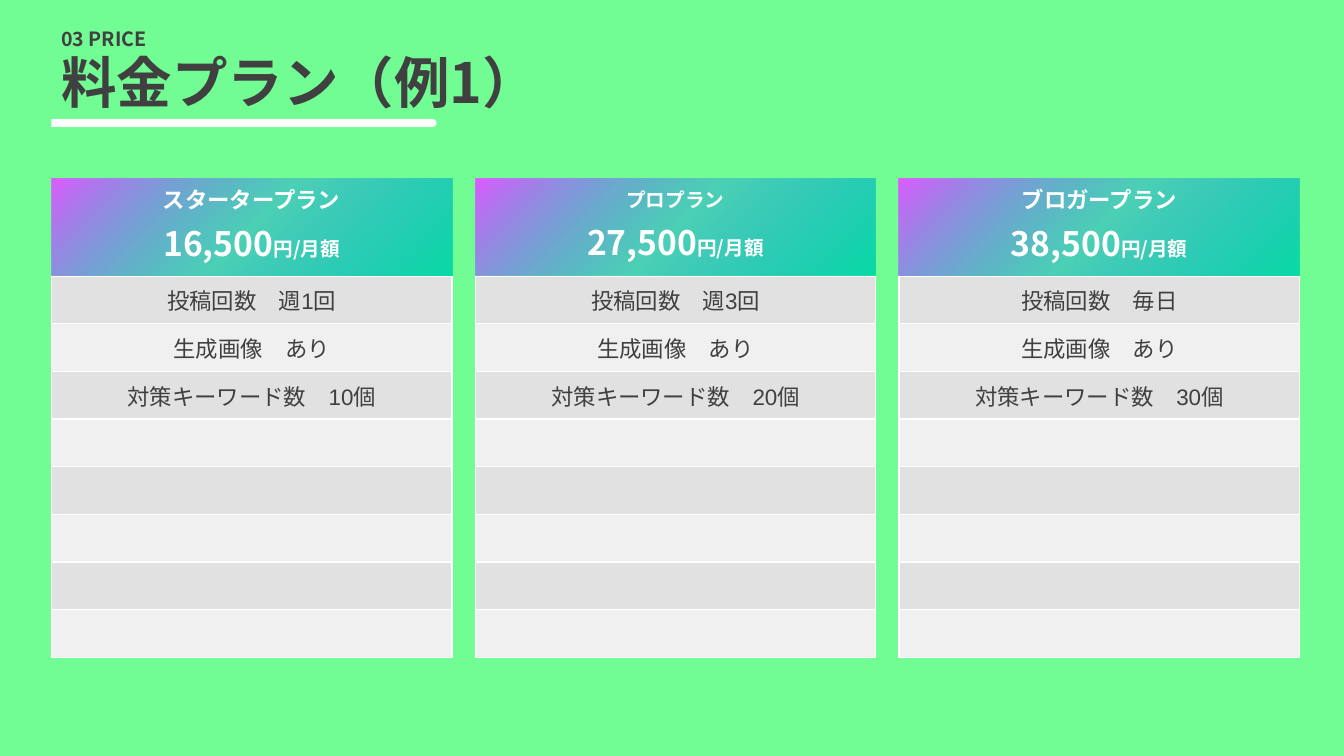
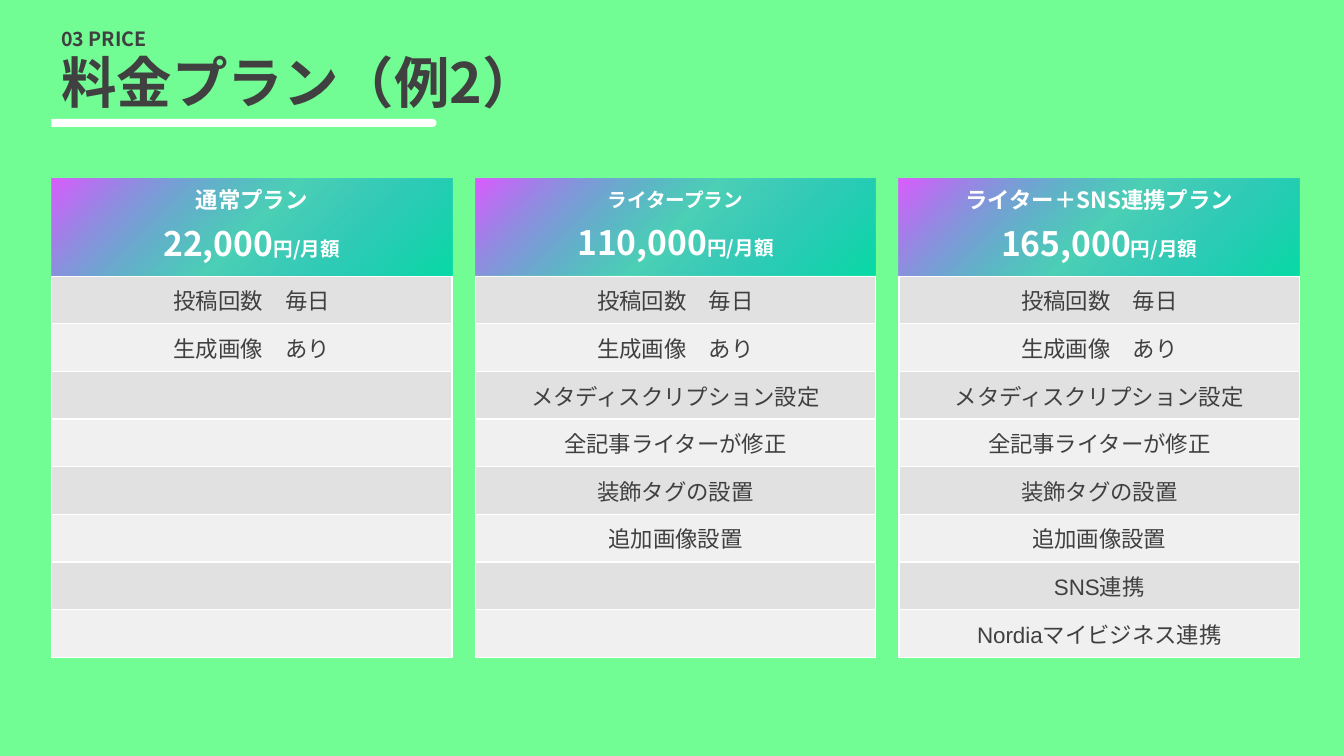
from pptx import Presentation
from pptx.dml.color import RGBColor
from pptx.enum.lang import MSO_LANGUAGE_ID as Lang
from pptx.enum.shapes import MSO_SHAPE as Shape
from pptx.enum.text import MSO_ANCHOR as Anchor, PP_ALIGN as Align
from pptx.oxml import parse_xml
from pptx.oxml.ns import nsdecls
from pptx.util import Inches, Pt

# Content: title, then (plan, plan name size, price, features)
KICKER = "03 PRICE"
UNIT = "円/月額"
DAILY = ["投稿回数　毎日", "生成画像　あり"]
WRITER = DAILY + ["メタディスクリプション設定", "全記事ライターが修正",
                  "装飾タグの設置", "追加画像設置"]
PAGES = [
    ("料金プラン（例1）", [
        ("スタータープラン", 16, "16,500",
         ["投稿回数　週1回", "生成画像　あり", "対策キーワード数　10個"]),
        ("プロプラン", 14, "27,500",
         ["投稿回数　週3回", "生成画像　あり", "対策キーワード数　20個"]),
        ("ブロガープラン", 16, "38,500", DAILY + ["対策キーワード数　30個"]),
    ]),
    ("料金プラン（例2）", [
        ("通常プラン", 16, "22,000", DAILY),
        ("ライタープラン", 14, "110,000", WRITER),
        ("ライター＋SNS連携プラン", 16, "165,000",
         WRITER + ["SNS連携", "Nordiaマイビジネス連携"]),
    ]),
]

# Shared look
GREEN = RGBColor(0x72, 0xFC, 0x94)
WHITE = RGBColor(0xFF, 0xFF, 0xFF)
INK = RGBColor(0x40, 0x40, 0x40)
BANDS = [RGBColor(0xE1, 0xE1, 0xE1), RGBColor(0xF0, 0xF0, 0xF0)]
MINT = RGBColor(0x08, 0xDC, 0xA4)
BLUE = RGBColor(0x1A, 0x97, 0xE1)
PINK = RGBColor(0xDE, 0x5C, 0xFF)
HEADER_STOPS = [(0, MINT, 100), (50, BLUE, 43), (100, PINK, 100)]  # %, colour, opacity
HEADER_ANGLE = 225
HEAD_FONT, CELL_FONT = "Noto Sans CJK JP", "Arial"

# Grid in inches
LEFT, GRID_W, GAP, COLUMNS = 0.51, 12.38, 0.23, 3
COL_W = (GRID_W - GAP * (COLUMNS - 1)) / COLUMNS
HEADER_TOP, HEADER_H = 1.77, 0.96
TABLE_TOP, TABLE_H, ROWS = 2.74, 3.78, 8
RULE_W, RULE_H, RULE_MID = 3.82, 0.08, 1.22


def box(*lengths):
    return [Inches(n) for n in lengths]


def add_run(paragraph, text, size, color, font=HEAD_FONT, bold=True):
    run = paragraph.add_run()
    run.text = text
    style = run.font
    style.size, style.bold, style.name = Pt(size), bold, font
    style.color.rgb = color
    style.language_id = Lang.JAPANESE
    style._element.find("{*}latin").addnext(
        parse_xml(f'<a:ea {nsdecls("a")} typeface="{HEAD_FONT}"/>'))


def add_heading(slide, text, size, place, inset_y, anchor):
    frame = slide.shapes.add_textbox(*box(*place)).text_frame
    frame.word_wrap = True
    frame.margin_top = frame.margin_bottom = Inches(inset_y)
    frame.vertical_anchor = anchor
    paragraph = frame.paragraphs[0]
    paragraph.line_spacing = 0.9
    add_run(paragraph, text, size, INK)


def plain_shape(slide, kind, place):
    shape = slide.shapes.add_shape(kind, *box(*place))
    shape.shadow.inherit = False
    shape.line.fill.background()
    return shape


def add_title_rule(slide):
    # Upright bar turned so that its rounded end points right
    rule = plain_shape(slide, Shape.ROUND_2_SAME_RECTANGLE,
                       (LEFT + (RULE_W - RULE_H) / 2, RULE_MID - RULE_W / 2,
                        RULE_H, RULE_W))
    rule.rotation = 90
    rule.adjustments[0], rule.adjustments[1] = 0.5, 0
    rule.fill.solid()
    rule.fill.fore_color.rgb = WHITE


def fill_gradient(shape):
    shape.fill.gradient()
    shape.fill.gradient_angle = 360 - HEADER_ANGLE
    stops = "".join(
        f'<a:gs pos="{pos * 1000}"><a:srgbClr val="{color}">'
        f'<a:alpha val="{opacity * 1000}"/></a:srgbClr></a:gs>'
        for pos, color, opacity in HEADER_STOPS)
    old = shape._element.spPr.find("{*}gradFill").find("{*}gsLst")
    old.getparent().replace(
        old, parse_xml(f'<a:gsLst {nsdecls("a")}>{stops}</a:gsLst>'))


def add_plan_header(slide, left, plan, plan_size, price):
    header = plain_shape(slide, Shape.RECTANGLE, (left, HEADER_TOP, COL_W, HEADER_H))
    fill_gradient(header)
    frame = header.text_frame
    frame.word_wrap = True
    frame.vertical_anchor = Anchor.MIDDLE
    lines = [[(plan, plan_size)], [(price, 24), (UNIT, 14)]]
    for paragraph, runs in zip([frame.paragraphs[0], frame.add_paragraph()], lines):
        paragraph.alignment = Align.CENTER
        paragraph.line_spacing, paragraph.space_before = 0.9, Pt(10)
        for text, size in runs:
            add_run(paragraph, text, size, WHITE)


def add_feature_table(slide, left, features):
    table = slide.shapes.add_table(
        ROWS, 1, *box(left, TABLE_TOP, COL_W, TABLE_H)).table
    table.first_row = table.horz_banding = False
    for row in range(ROWS):
        cell = table.cell(row, 0)
        cell.fill.solid()
        cell.fill.fore_color.rgb = BANDS[row % 2]
        cell.vertical_anchor = Anchor.MIDDLE
        if row < len(features):
            paragraph = cell.text_frame.paragraphs[0]
            paragraph.alignment = Align.CENTER
            add_run(paragraph, features[row], 16, INK, CELL_FONT, False)


def add_price_slide(prs, title, plans):
    slide = prs.slides.add_slide(prs.slide_layouts[6])
    add_title_rule(slide)
    add_heading(slide, title, 39.6, (LEFT, 0.53, 11.5, 0.63), 0.05, Anchor.MIDDLE)
    add_heading(slide, KICKER, 14, (LEFT, 0.27, 6.43, 0.24), 0.02, Anchor.TOP)
    for column, (plan, plan_size, price, features) in enumerate(plans):
        left = LEFT + column * (COL_W + GAP)
        add_plan_header(slide, left, plan, plan_size, price)
        add_feature_table(slide, left, features)


def main():
    prs = Presentation()
    prs.slide_width, prs.slide_height = box(13.33, 7.5)
    background = prs.slide_master.background.fill
    background.solid()
    background.fore_color.rgb = GREEN
    for title, plans in PAGES:
        add_price_slide(prs, title, plans)
    prs.save("out.pptx")


if __name__ == "__main__":
    main()
